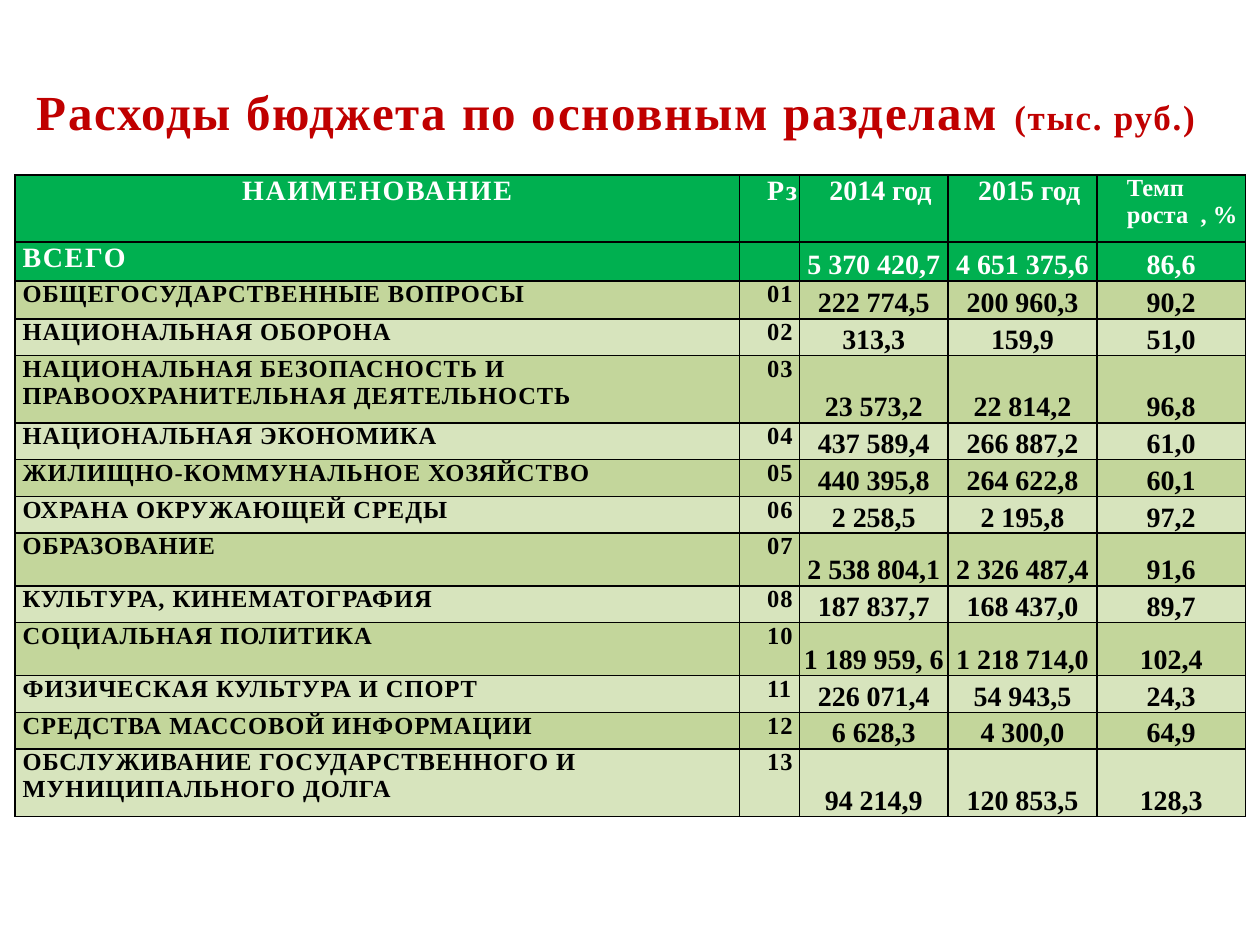
from lxml.etree import SubElement
from pptx import Presentation
from pptx.dml.color import RGBColor
from pptx.enum.shapes import MSO_SHAPE
from pptx.enum.text import MSO_ANCHOR, PP_ALIGN
from pptx.oxml.ns import qn
from pptx.util import Pt

FONT = "Times New Roman"
RED = RGBColor(0xC0, 0x00, 0x00)
GREEN = RGBColor(0x00, 0xB0, 0x50)
OLIVE = RGBColor(0xC3, 0xD6, 0x9B)
PALE = RGBColor(0xD7, 0xE4, 0xBD)
WHITE = RGBColor(0xFF, 0xFF, 0xFF)
BLACK = RGBColor(0x00, 0x00, 0x00)

HEADER = ("НАИМЕНОВАНИЕ", "Рз", "2014 год", "2015 год", "Темп роста  , %")
TOTAL = ("ВСЕГО", "", "5 370 420,7", "4 651 375,6", "86,6")
SECTIONS = [
    ("ОБЩЕГОСУДАРСТВЕННЫЕ ВОПРОСЫ", "01", "222 774,5", "200 960,3", "90,2"),
    ("НАЦИОНАЛЬНАЯ ОБОРОНА", "02", "313,3", "159,9", "51,0"),
    ("НАЦИОНАЛЬНАЯ БЕЗОПАСНОСТЬ И ПРАВООХРАНИТЕЛЬНАЯ ДЕЯТЕЛЬНОСТЬ", "03",
     "23 573,2", "22 814,2", "96,8"),
    ("НАЦИОНАЛЬНАЯ ЭКОНОМИКА", "04", "437 589,4", "266 887,2", "61,0"),
    ("ЖИЛИЩНО-КОММУНАЛЬНОЕ ХОЗЯЙСТВО", "05", "440 395,8", "264 622,8", "60,1"),
    ("ОХРАНА ОКРУЖАЮЩЕЙ СРЕДЫ", "06", "2 258,5", "2 195,8", "97,2"),
    ("ОБРАЗОВАНИЕ", "07", "2 538 804,1", "2 326 487,4", "91,6"),
    ("КУЛЬТУРА, КИНЕМАТОГРАФИЯ", "08", "187 837,7", "168 437,0", "89,7"),
    ("СОЦИАЛЬНАЯ ПОЛИТИКА", "10", "1 189 959, 6", "1 218 714,0", "102,4"),
    ("ФИЗИЧЕСКАЯ КУЛЬТУРА И СПОРТ", "11", "226 071,4", "54 943,5", "24,3"),
    ("СРЕДСТВА МАССОВОЙ ИНФОРМАЦИИ", "12", "6 628,3", "4 300,0", "64,9"),
    ("ОБСЛУЖИВАНИЕ ГОСУДАРСТВЕННОГО И МУНИЦИПАЛЬНОГО ДОЛГА", "13",
     "94 214,9", "120 853,5", "128,3"),
]
COL_WIDTHS = (414, 34.2, 85, 85, 85)
ROW_HEIGHTS = (38.3, 22.3, 21.7, 21, 38.5, 21, 21, 21, 30.2, 21, 30.2, 21, 21, 38.5)
INDENTS = (4.3, 15.8, 17.2, 17.2, 17.2)


def add_run(p, text, spacing=0):
    """Add a run with letter spacing given in points."""
    r = p.add_run()
    r.text = text
    r._r.get_or_add_rPr().set("spc", str(int(spacing * 100)))
    return r


def set_font(p, size, color):
    p.font.name, p.font.bold = FONT, True
    p.font.size, p.font.color.rgb = Pt(size), color


def add_borders(cell):
    tc_pr = cell._tc.get_or_add_tcPr()
    for side in ("lnL", "lnR", "lnT", "lnB"):
        ln = SubElement(tc_pr, qn(f"a:{side}"), w=str(Pt(1)))
        fill = SubElement(ln, qn("a:solidFill"))
        SubElement(fill, qn("a:srgbClr"), val=str(BLACK))


def add_title(slide, left, top, width, height):
    sp = slide.shapes.add_shape(MSO_SHAPE.RECTANGLE, Pt(left), Pt(top), Pt(width), Pt(height))
    sp.shadow.inherit = False
    sp.fill.solid()
    sp.fill.fore_color.rgb = WHITE
    sp.line.fill.background()
    tf = sp.text_frame
    tf.word_wrap = True
    tf.vertical_anchor = MSO_ANCHOR.TOP
    tf.margin_left = tf.margin_bottom = 0
    tf.margin_top, tf.margin_right = Pt(4), Pt(16)
    p = tf.paragraphs[0]
    p.alignment = PP_ALIGN.CENTER
    set_font(p, 28, RED)
    add_run(p, "Расходы бюджета по основным разделам ", 1)
    add_run(p, "(тыс. руб.)", 1).font.size = Pt(20)


def fill_cell(cell, text, row, col):
    """Style one cell by its place: header, total or section row; label or figure column."""
    is_header, is_green = row == 0, row < 2
    is_label = col < 2
    is_figure = not (is_header or is_label)
    add_borders(cell)
    cell.fill.solid()
    cell.fill.fore_color.rgb = GREEN if is_green else (OLIVE, PALE)[row % 2]
    inset = Pt(0.7) if is_figure else 0
    cell.margin_left = cell.margin_right = cell.margin_top = inset
    cell.margin_bottom = 0
    cell.vertical_anchor = MSO_ANCHOR.BOTTOM if is_figure else MSO_ANCHOR.TOP
    p = cell.text_frame.paragraphs[0]
    if is_figure or (is_header and col == 0):
        p.alignment = PP_ALIGN.CENTER
    else:
        p_pr = p._p.get_or_add_pPr()
        p_pr.set("marL", str(Pt(INDENTS[col])))
        p_pr.set("indent", "0")
    is_small = (is_label and not is_green) or (is_header and col == 4)
    set_font(p, 14 if is_small else 16, WHITE if is_green else BLACK)
    if text:
        add_run(p, text, (1 if is_green else 0.5) if is_label else 0)


def add_budget_table(slide, left, top, width, height):
    rows = [HEADER, TOTAL, *SECTIONS]
    table = slide.shapes.add_table(len(rows), len(HEADER), Pt(left), Pt(top),
                                   Pt(width), Pt(height)).table
    for column, points in zip(table.columns, COL_WIDTHS):
        column.width = Pt(points)
    for row, points in zip(table.rows, ROW_HEIGHTS):
        row.height = Pt(points)
    for i, values in enumerate(rows):
        for j, text in enumerate(values):
            fill_cell(table.cell(i, j), text, i, j)


def main():
    prs = Presentation()
    prs.slide_width, prs.slide_height = Pt(720), Pt(540)
    slide = prs.slides.add_slide(prs.slide_layouts[6])
    # Heading band
    add_title(slide, 0, 42.5, 720, 69)
    # Spending by section
    add_budget_table(slide, 8.6, 100, sum(COL_WIDTHS), sum(ROW_HEIGHTS))
    prs.save("out.pptx")


if __name__ == "__main__":
    main()
